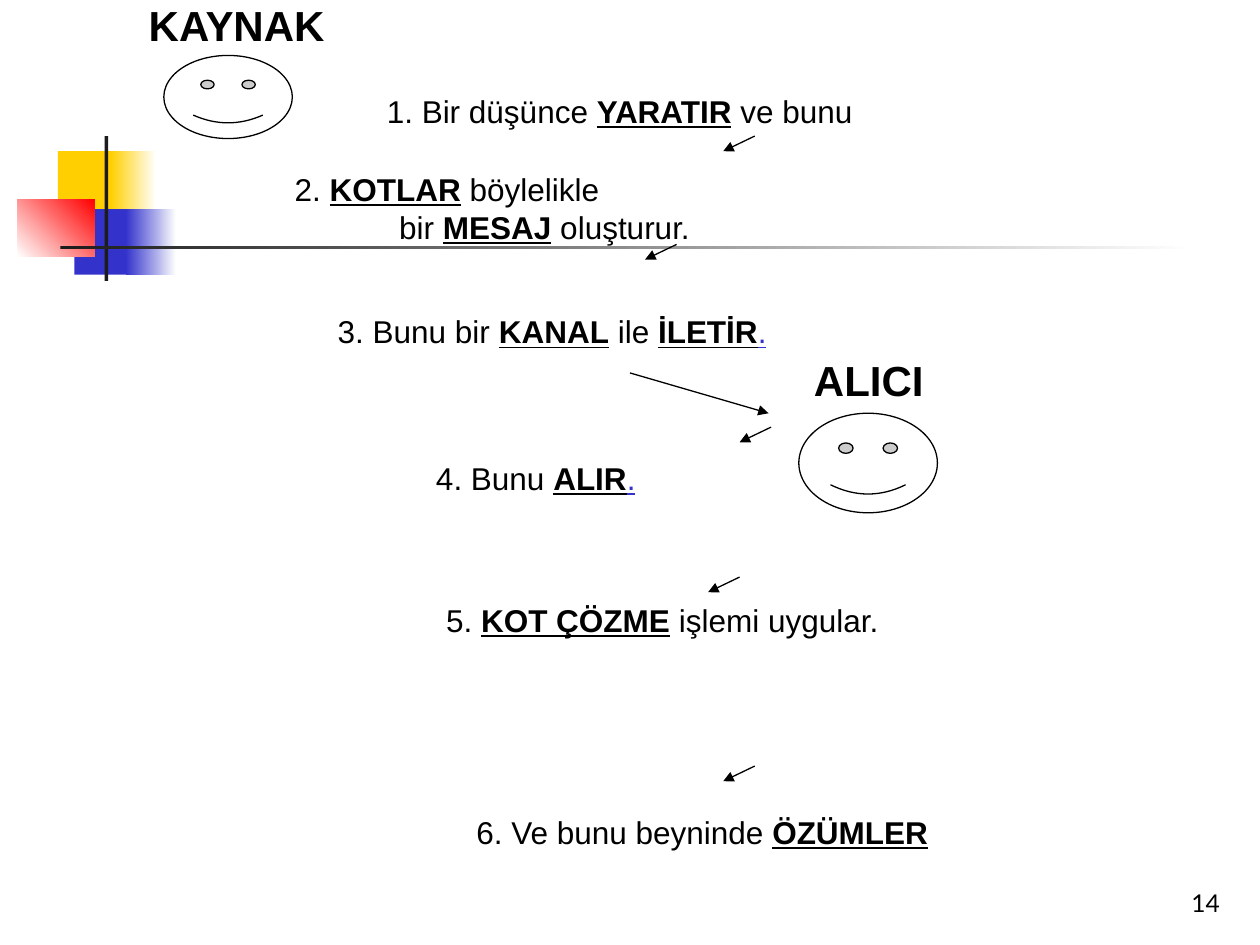
from lxml import etree
from pptx import Presentation
from pptx.dml.color import RGBColor
from pptx.enum.shapes import MSO_CONNECTOR, MSO_SHAPE
from pptx.enum.text import MSO_ANCHOR, PP_ALIGN
from pptx.oxml.ns import qn
from pptx.util import Inches, Pt

STRAIGHT = MSO_CONNECTOR.STRAIGHT
RECTANGLE, SMILEY = MSO_SHAPE.RECTANGLE, MSO_SHAPE.SMILEY_FACE
TOP, BOTTOM = MSO_ANCHOR.TOP, MSO_ANCHOR.BOTTOM
LEFT, RIGHT = PP_ALIGN.LEFT, PP_ALIGN.RIGHT

COLORS = {
    "black": "000000", "white": "FFFFFF", "yellow": "FFCF01",
    "blue": "3333CC", "red": "FF0000", "charcoal": "1C1C1C",
}
PLAIN = {}
BOLD = {"bold": True}
KEY = {"bold": True, "underline": True}
DOT = {"underline": True, "color": "blue"}


class SlideBuilder:
    """Draws styled elements on the current slide."""

    def __init__(self, slide, font="Arial", line_width=0.75):
        self.slide = slide
        self.font = font
        self.line_width = Pt(line_width)

    def rgb(self, name):
        return RGBColor.from_string(COLORS[name])

    def shape(self, kind, box):
        shape = self.slide.shapes.add_shape(kind, *map(Inches, box))
        shape.shadow.inherit = False
        return shape

    def block(self, box, colors, angle=0):
        block = self.shape(RECTANGLE, box)
        block.line.fill.background()
        if len(colors) == 1:
            block.fill.solid()
            block.fill.fore_color.rgb = self.rgb(colors[0])
            return
        block.fill.gradient()
        block.fill.gradient_angle = angle
        for stop, color in zip(block.fill.gradient_stops, colors):
            stop.color.rgb = self.rgb(color)

    def face(self, box):
        face = self.shape(SMILEY, box)
        face.adjustments[0] = 0.047
        face.fill.solid()
        face.fill.fore_color.rgb = self.rgb("white")
        face.line.color.rgb = self.rgb("black")
        face.line.width = self.line_width

    def arrow(self, start, end):
        arrow = self.slide.shapes.add_connector(
            STRAIGHT, *map(Inches, (*start, *end)))
        arrow.line.color.rgb = self.rgb("black")
        arrow.line.width = self.line_width
        outline = arrow.line._get_or_add_ln()
        etree.SubElement(outline, qn("a:tailEnd"), type="triangle")
        etree.SubElement(arrow._element.spPr, qn("a:effectLst"))

    def text(self, box, paragraphs, size=18, inset=(0.59, 0.07), font=None,
             anchor=TOP, align=LEFT, indents=(0, 0)):
        frame = self.slide.shapes.add_textbox(*map(Inches, box)).text_frame
        layout = {
            "word_wrap": True, "vertical_anchor": anchor,
            "margin_left": Inches(inset[0]), "margin_top": Inches(inset[1]),
            "margin_right": Inches(0.1 if align == RIGHT else 0),
        }
        for name, value in layout.items():
            setattr(frame, name, value)
        for index, (runs, indent) in enumerate(zip(paragraphs, indents)):
            paragraph = frame.add_paragraph() if index else frame.paragraphs[0]
            paragraph.alignment = align
            paragraph._p.get_or_add_pPr().set("marL", str(Inches(indent)))
            for words, style in runs:
                run = paragraph.add_run()
                run.text = words
                look = {"name": font or self.font, "size": Pt(size), **style}
                run.font.color.rgb = self.rgb(look.pop("color", "black"))
                for name, value in look.items():
                    setattr(run.font, name, value)


def main():
    deck = Presentation()
    deck.slide_width, deck.slide_height = Inches(10), Inches(7.5)
    builder = SlideBuilder(deck.slides.add_slide(deck.slide_layouts[6]))

    ornament = [
        ((0.46, 1.2, 0.48, 0.52), ["yellow"]),
        ((0.88, 1.2, 0.36, 0.52), ["yellow", "white"]),
        ((0.59, 1.66, 0.46, 0.52), ["blue"]),
        ((1, 1.66, 0.4, 0.52), ["blue", "white"]),
        ((0.14, 1.58, 0.61, 0.46), ["white", "red"], 45),
        ((0.83, 1.08, 0.03, 1.15), ["charcoal"]),
        ((0.48, 1.95, 9, 0.03), ["charcoal", "white"]),
    ]
    for part in ornament:
        builder.block(*part)

    builder.text((7.7, 6.83, 2.08, 0.5), [[("14", PLAIN)]], size=14,
                 inset=(0.1, 0.05), font="Lato", anchor=BOTTOM, align=RIGHT)

    for face in [(1.3, 0.44, 1.02, 0.66), (6.34, 3.28, 1.1, 0.79)]:
        builder.face(face)

    step_starts = [(5.99, 1.08), (5.37, 1.94), (6.12, 3.39),
                   (5.87, 4.58), (5.99, 6.08)]
    for x, y in step_starts:
        builder.arrow((x, y), (x - 0.25, y + 0.12))
    builder.arrow((5, 2.96), (6.1, 3.28))

    roles = [("KAYNAK", (0.59, -0.07, 3.13, 0.9)),
             ("ALICI", (5.87, 2.74, 1.89, 0.9))]
    for role, box in roles:
        builder.text(box, [[(role, BOLD)]], size=24)

    steps = [
        ((2.48, 0.66, 4.8, 1.3), 0.07,
         [("1. Bir düşünce ", PLAIN), ("YARATIR", KEY), (" ve bunu", PLAIN)]),
        ((2.09, 2.41, 4.15, 0.7), 0.07,
         [("3. Bunu bir ", PLAIN), ("KANAL", KEY), (" ile ", PLAIN),
          ("İLETİR", KEY), (".", DOT)]),
        ((2.87, 2.99, 2.28, 1.3), 0.65,
         [("4. Bunu ", PLAIN), ("ALIR", KEY), (".", DOT)]),
        ((2.95, 3.83, 4.95, 1.3), 0.94,
         [("5. ", PLAIN), ("KOT ÇÖZME", KEY), (" işlemi uygular.", PLAIN)]),
        ((3.19, 5.8, 4.29, 1.3), 0.65,
         [("6. Ve bunu beyninde ", PLAIN), ("ÖZÜMLER", KEY)]),
    ]
    for box, drop, runs in steps:
        builder.text(box, [runs], inset=(0.59, drop))

    coding = [
        [("2. ", PLAIN), ("KOTLAR", KEY), (" böylelikle", PLAIN)],
        [("bir ", PLAIN), ("MESAJ", KEY), (" oluşturur.", PLAIN)],
    ]
    builder.text((2.24, 1.3, 3.35, 1), coding, inset=(0.1, 0.05),
                 indents=(0, 0.83))

    deck.save("out.pptx")


if __name__ == "__main__":
    main()
